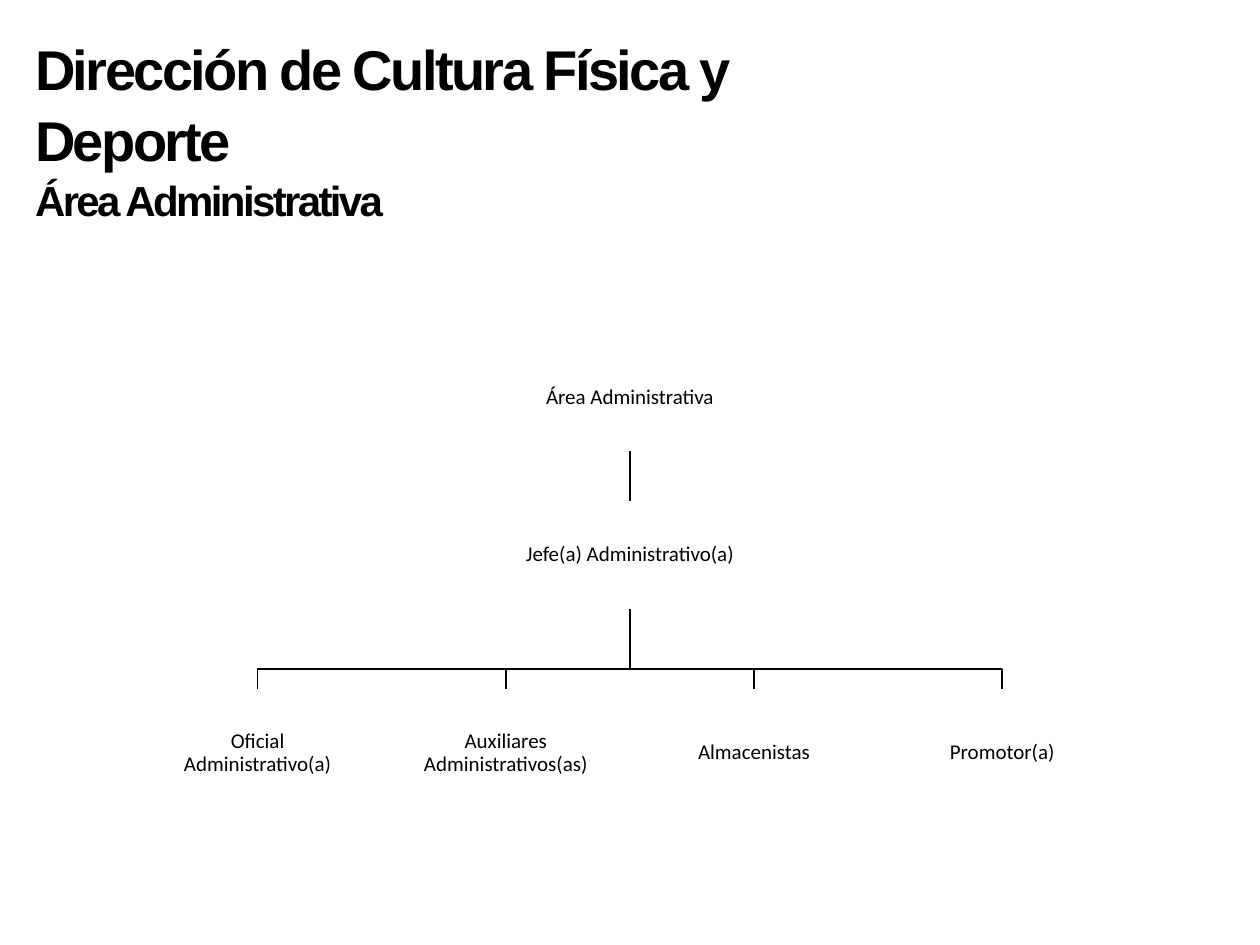
from pptx import Presentation
from pptx.dml.color import RGBColor
from pptx.enum import shapes, text
from pptx.oxml.ns import qn
from pptx.util import Inches, Pt
from lxml import etree

COLORS = {"ink": "000000", "box": "FFFFFF"}
CENTER_X = 5
ROLE_WIDTH, ROLE_PITCH = 1.66, 1.97
AREA_TOP, CHIEF_TOP, ROLE_TOP = 2.73, 3.98, 5.47
BOX_HEIGHT, ROLE_HEIGHT = 0.85, 1.01
BUS_Y = 5.31
ROLES = [
    ["Oficial", "Administrativo(a)"],
    ["Auxiliares Administrativos(as)"],
    ["Almacenistas"],
    ["Promotor(a)"],
]


def color(name):
    return RGBColor.from_string(COLORS[name])


def style_run(r, font, size, bold=False):
    r.font.name = font
    r.font.size = Pt(size)
    r.font.bold = bold
    r.font.color.rgb = color("ink")


def add_title(s, lines):
    sp = s.shapes.add_textbox(Inches(0.18), Inches(0.2), Inches(7.21), Inches(1.58))
    tf = sp.text_frame
    tf.word_wrap = True
    for i, (line, size) in enumerate(lines):
        p = tf.paragraphs[0] if i == 0 else tf.add_paragraph()
        p.line_spacing = 1.05
        r = p.add_run()
        r.text = line
        style_run(r, "Arial", size, bold=True)
        r.font._element.set("spc", "-150")


def add_box(s, lines, center, top, width, height, filled=True):
    sp = s.shapes.add_shape(
        shapes.MSO_SHAPE.RECTANGLE, Inches(center - width / 2), Inches(top),
        Inches(width), Inches(height))
    sp.shadow.inherit = False
    sp.line.fill.background()
    if filled:
        sp.fill.solid()
        sp.fill.fore_color.rgb = color("box")
    else:
        sp.fill.background()
    tf = sp.text_frame
    tf.word_wrap = True
    tf.vertical_anchor = text.MSO_ANCHOR.MIDDLE
    tf.margin_left = tf.margin_right = tf.margin_top = tf.margin_bottom = Inches(0.01)
    p = tf.paragraphs[0]
    p.alignment = text.PP_ALIGN.CENTER
    p.line_spacing = 0.9
    p.space_after = Pt(4.2)
    for i, line in enumerate(lines):
        if i:
            p.add_line_break()
        r = p.add_run()
        r.text = line
        style_run(r, "Calibri", 12)


def style_line(sp):
    sp.line.color.rgb = color("ink")
    sp.line.width = Pt(1)


def add_link(s, x, top, bottom):
    sp = s.shapes.add_connector(
        shapes.MSO_CONNECTOR.STRAIGHT, Inches(x), Inches(top), Inches(x), Inches(bottom))
    style_line(sp)
    etree.SubElement(sp._element.spPr, qn("a:effectLst"))


def add_branch(s, x, top, bottom):
    points = [(CENTER_X, BUS_Y), (x, BUS_Y), (x, bottom)]
    builder = s.shapes.build_freeform(Inches(CENTER_X), Inches(top))
    builder.add_line_segments([(Inches(a), Inches(b)) for a, b in points], close=False)
    sp = builder.convert_to_shape()
    sp.shadow.inherit = False
    sp.fill.background()
    style_line(sp)


def main():
    prs = Presentation()
    prs.slide_width, prs.slide_height = Inches(10), Inches(7.5)
    s = prs.slides.add_slide(prs.slide_layouts[6])

    # Heading
    add_title(s, [("Dirección de Cultura Física y Deporte", 32),
                  ("Área Administrativa", 24)])

    # Lines of the chart
    middle = (len(ROLES) - 1) / 2
    centers = [CENTER_X + (i - middle) * ROLE_PITCH for i in range(len(ROLES))]
    for x in centers:
        add_branch(s, x, CHIEF_TOP + BOX_HEIGHT, ROLE_TOP)
    add_link(s, CENTER_X, AREA_TOP + BOX_HEIGHT, CHIEF_TOP)

    # Area, chief and roles
    add_box(s, ["Área Administrativa"], CENTER_X, AREA_TOP, 2.04, BOX_HEIGHT, filled=False)
    add_box(s, ["Jefe(a) Administrativo(a)"], CENTER_X, CHIEF_TOP, 2.04, BOX_HEIGHT)
    for x, lines in zip(centers, ROLES):
        add_box(s, lines, x, ROLE_TOP, ROLE_WIDTH, ROLE_HEIGHT)

    prs.save("out.pptx")


if __name__ == "__main__":
    main()
